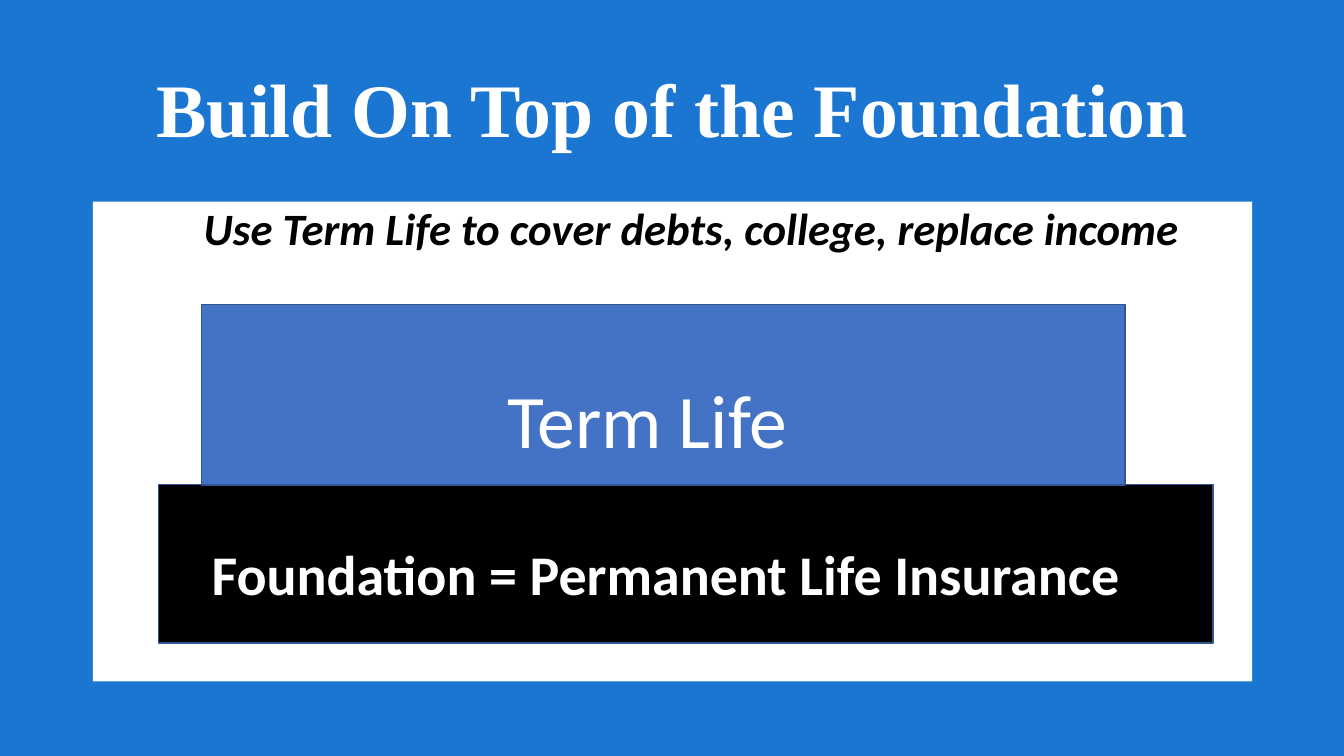
from dataclasses import dataclass

from pptx import Presentation
from pptx.dml.color import RGBColor
from pptx.enum.shapes import MSO_SHAPE as Shape
from pptx.enum.text import MSO_ANCHOR as Anchor, MSO_AUTO_SIZE as Fit, PP_ALIGN as Align
from pptx.oxml.xmlchemy import OxmlElement as Element
from pptx.util import Inches, Pt

BLUE = RGBColor(0x1B, 0x76, 0xD2)
BLOCK = RGBColor(0x44, 0x72, 0xC4)
EDGE = RGBColor(0x32, 0x54, 0x91)
WHITE = RGBColor(0xFF, 0xFF, 0xFF)
BLACK = RGBColor(0, 0, 0)


@dataclass(frozen=True)
class Box:
    left: float
    top: float
    width: float
    height: float

    def lengths(self) -> tuple:
        return tuple(Inches(v) for v in (self.left, self.top, self.width, self.height))


@dataclass(frozen=True)
class Style:
    size: int
    color: RGBColor = WHITE
    font: str = "Calibri"
    bold: bool = False
    italic: bool = False
    align: Align = Align.LEFT


@dataclass(frozen=True)
class Layer:
    """A block of the building and the label that lies over it."""
    box: Box
    fill: RGBColor
    text: str
    label: Box
    style: Style


LAYERS = (
    Layer(Box(1.57, 4.81, 10.46, 1.57), BLACK, "Foundation = Permanent Life Insurance",
          Box(2, 5.3, 9.76, 0.77), Style(40, bold=True)),
    Layer(Box(2, 3.02, 9.16, 1.79), BLOCK, "Term Life",
          Box(2.61, 3.65, 7.62, 1.01), Style(54, align=Align.CENTER)),
)


def place(shape, box: Box) -> None:
    shape.left, shape.top, shape.width, shape.height = box.lengths()


def write(frame, text: str, style: Style):
    """Put one styled run in the first paragraph and return that paragraph."""
    frame.word_wrap = True
    para = frame.paragraphs[0]
    para.alignment = style.align
    run = para.add_run()
    run.text = text
    font = run.font
    font.name, font.size = style.font, Pt(style.size)
    font.bold, font.italic = style.bold, style.italic
    font.color.rgb = style.color
    return para


def add_title(slide) -> None:
    title = slide.shapes.title
    place(title, Box(0.92, 0.4, 11.5, 1.45))
    frame = title.text_frame
    frame.auto_size = Fit.NONE
    frame.vertical_anchor = Anchor.MIDDLE
    style = Style(54, font="Times New Roman", bold=True, align=Align.CENTER)
    write(frame, "Build On Top of the Foundation", style).line_spacing = 0.9


def add_body(slide) -> None:
    body = slide.placeholders[1]
    place(body, Box(0.92, 2, 11.5, 4.76))
    body.fill.solid()
    body.fill.fore_color.rgb = WHITE
    frame = body.text_frame
    frame.auto_size = Fit.NONE
    frame.vertical_anchor = Anchor.TOP
    para = write(frame, "Use Term Life to cover debts, college, replace income",
                 Style(32, BLACK, bold=True, italic=True))
    para.line_spacing, para.space_before = 0.9, Pt(10)
    props = para._p.get_or_add_pPr()
    props.set("marL", str(Inches(1)))
    props.set("indent", "0")
    props.append(Element("a:buNone"))


def add_layer(slide, layer: Layer) -> None:
    block = slide.shapes.add_shape(Shape.RECTANGLE, *layer.box.lengths())
    block.shadow.inherit = False
    block.fill.solid()
    block.fill.fore_color.rgb = layer.fill
    block.line.color.rgb = EDGE
    block.line.width = Pt(1)
    label = slide.shapes.add_textbox(*layer.label.lengths())
    write(label.text_frame, layer.text, layer.style)
    label.text_frame.auto_size = Fit.SHAPE_TO_FIT_TEXT


def main() -> None:
    deck = Presentation()
    deck.slide_width, deck.slide_height = Inches(13.33), Inches(7.5)
    slide = deck.slides.add_slide(deck.slide_layouts[1])
    slide.background.fill.solid()
    slide.background.fill.fore_color.rgb = BLUE
    add_title(slide)
    add_body(slide)
    for layer in LAYERS:
        add_layer(slide, layer)
    deck.save("out.pptx")


if __name__ == "__main__":
    main()
